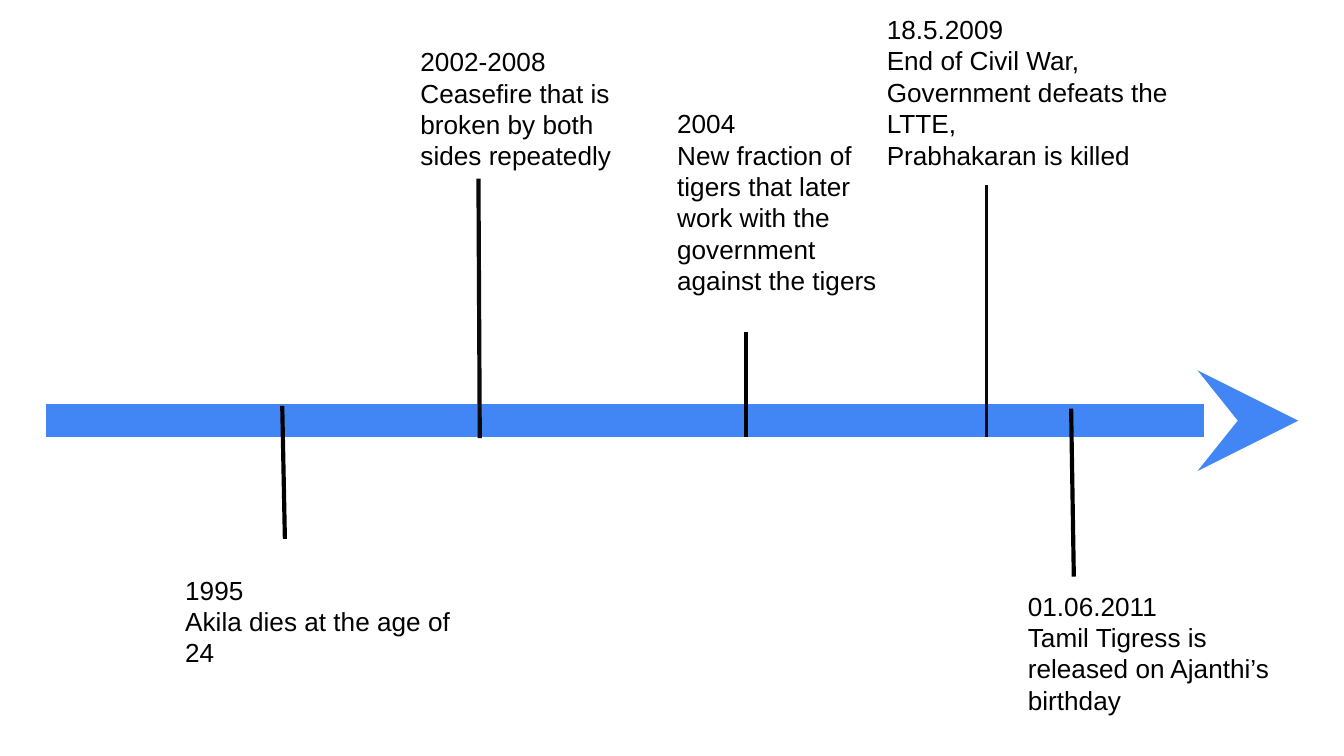
from dataclasses import dataclass

from lxml import etree
from pptx import Presentation
from pptx.dml.color import RGBColor
from pptx.enum.shapes import MSO_CONNECTOR
from pptx.enum.text import MSO_ANCHOR, MSO_AUTO_SIZE, PP_ALIGN
from pptx.oxml.ns import qn
from pptx.util import Inches, Pt

STRAIGHT = MSO_CONNECTOR.STRAIGHT
TOP = MSO_ANCHOR.TOP
LEFT = PP_ALIGN.LEFT
GROW = MSO_AUTO_SIZE.SHAPE_TO_FIT_TEXT


@dataclass(frozen=True)
class Theme:
    background: RGBColor = RGBColor(0xFF, 0xFF, 0xFF)
    text: RGBColor = RGBColor(0x00, 0x00, 0x00)
    marker: RGBColor = RGBColor(0x00, 0x00, 0x00)
    soft_marker: RGBColor = RGBColor(0x0A, 0x0A, 0x0A)
    axis: RGBColor = RGBColor(0x42, 0x85, 0xF4)
    font: str = "Arial"
    text_size: float = 14
    axis_width: float = 18
    marker_width: float = 2.25
    thin_width: float = 1.5


THEME = Theme()

# Marker: start x, start y, end x, end y, color, width
# Label: left, top, width, height, then its paragraphs
EVENTS = [
    ((7.34, 1.38, 7.34, 3.25, THEME.soft_marker, THEME.thin_width),
     (6.5, 0, 2.5, 1.38),
     ["18.5.2009", "End of Civil War,", "Government defeats the LTTE,",
      "Prabhakaran is killed"]),
    ((5.55, 2.47, 5.55, 3.25, THEME.marker, THEME.marker_width),
     (4.94, 0.7, 1.9, 1.62),
     ["2004", "New fraction of tigers that later work with the government "
              "against the tigers"]),
    ((3.56, 1.33, 3.57, 3.26, THEME.soft_marker, THEME.marker_width),
     (3.03, 0.24, 1.81, 1.14),
     ["2002-2008", "Ceasefire that is broken by both sides repeatedly"]),
    ((7.97, 3.04, 7.99, 4.29, THEME.marker, THEME.marker_width),
     (7.55, 4.29, 2.26, 1.14),
     ["01.06.2011", "Tamil Tigress is released on Ajanthi’s birthday"]),
    ((2.1, 3.02, 2.12, 4.01, THEME.marker, THEME.marker_width),
     (1.28, 4.17, 2.26, 0.91),
     ["1995", "Akila dies at the age of 24"]),
]


def add_line(slide, start_x, start_y, end_x, end_y, color, width):
    """Add a straight line without a shadow."""
    ends = [Inches(value) for value in (start_x, start_y, end_x, end_y)]
    connector = slide.shapes.add_connector(STRAIGHT, *ends)
    connector.line.color.rgb = color
    connector.line.width = Pt(width)
    etree.SubElement(connector._element.spPr, qn("a:effectLst"))
    return connector


def add_axis(slide):
    """Add the thick timeline with its arrowhead."""
    axis = add_line(slide, 0.34, 3.13, 9.66, 3.13, THEME.axis, THEME.axis_width)
    line_properties = axis._element.spPr.find(qn("a:ln"))
    etree.SubElement(line_properties, qn("a:tailEnd"),
                     type="stealth", w="med", len="med")


def add_label(slide, box, lines):
    """Add a text box with one paragraph per line."""
    shape = slide.shapes.add_textbox(*[Inches(value) for value in box])
    frame = shape.text_frame
    frame.word_wrap = True
    frame.auto_size = GROW
    frame.vertical_anchor = TOP
    frame.margin_left = frame.margin_right = Inches(0.1)
    frame.margin_top = frame.margin_bottom = Inches(0.1)
    frame.text = "\n".join(lines)
    for paragraph in frame.paragraphs:
        paragraph.alignment = LEFT
        paragraph.font.name = THEME.font
        paragraph.font.size = Pt(THEME.text_size)
        paragraph.font.color.rgb = THEME.text


def main():
    # Widescreen slide, 16:9
    presentation = Presentation()
    presentation.slide_width = Inches(10)
    presentation.slide_height = Inches(10) * 9 // 16
    slide = presentation.slides.add_slide(presentation.slide_layouts[6])
    slide.background.fill.solid()
    slide.background.fill.fore_color.rgb = THEME.background

    # Timeline
    add_axis(slide)

    # Events
    for marker, box, lines in EVENTS:
        add_line(slide, *marker)
        add_label(slide, box, lines)

    presentation.save("out.pptx")


if __name__ == "__main__":
    main()
